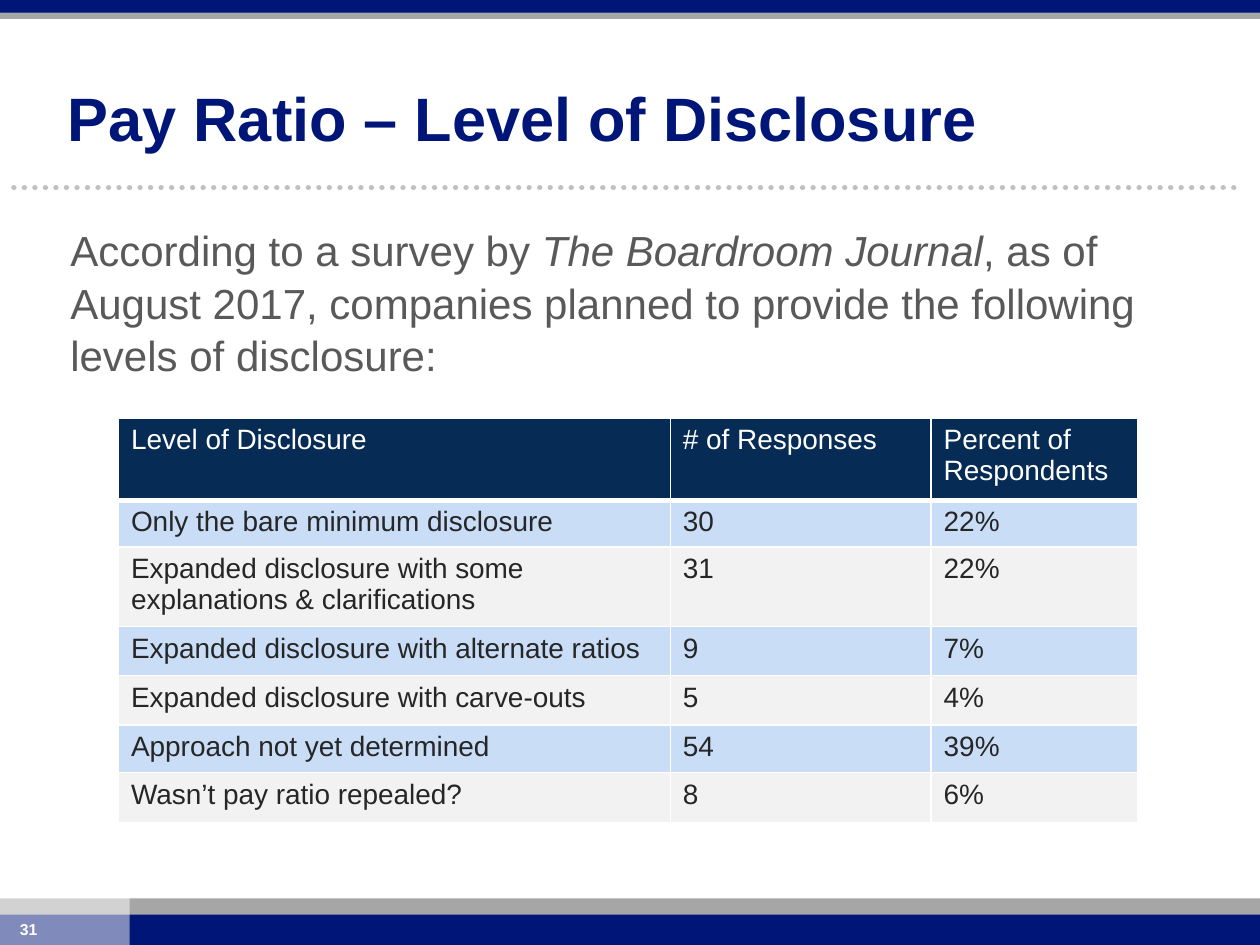
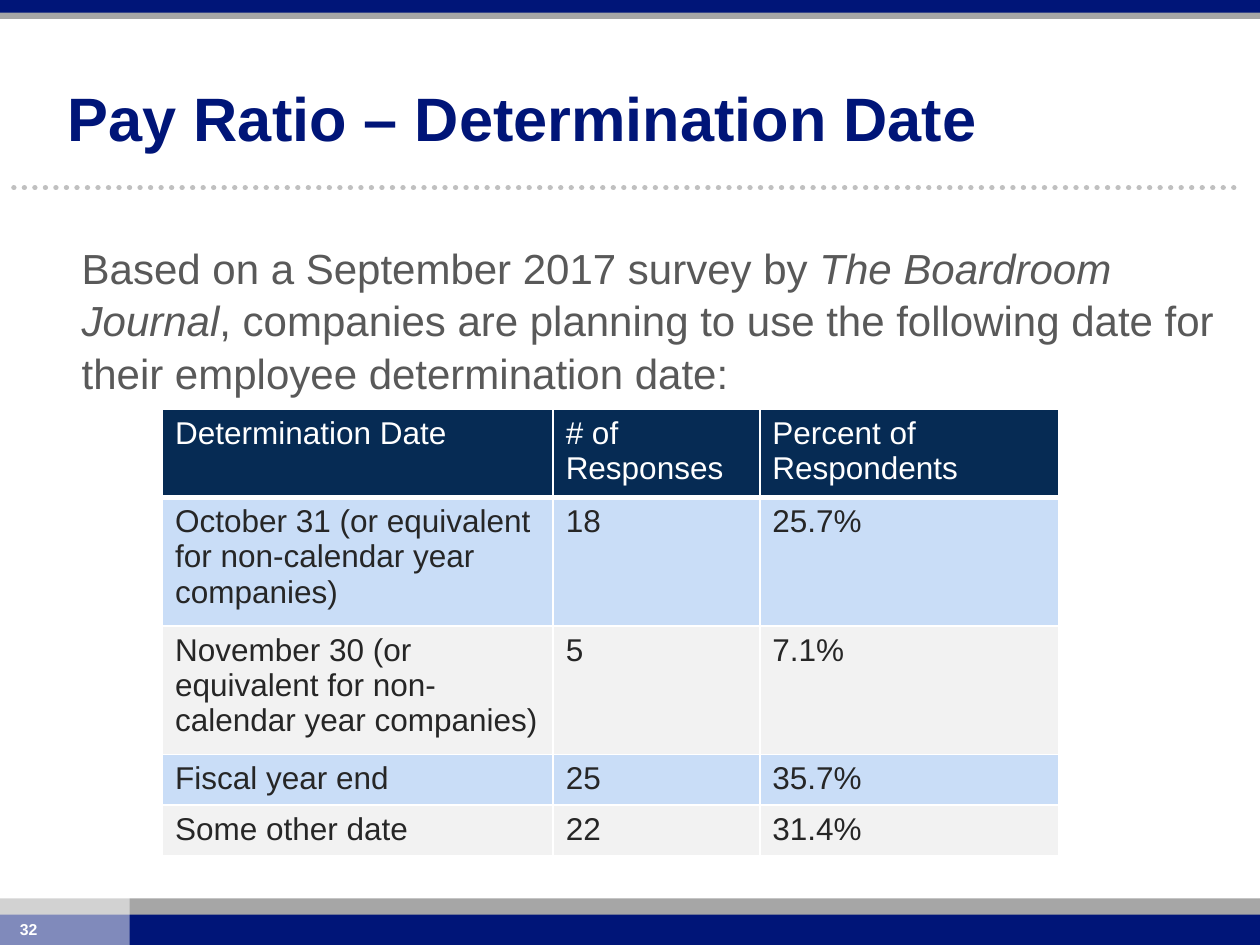
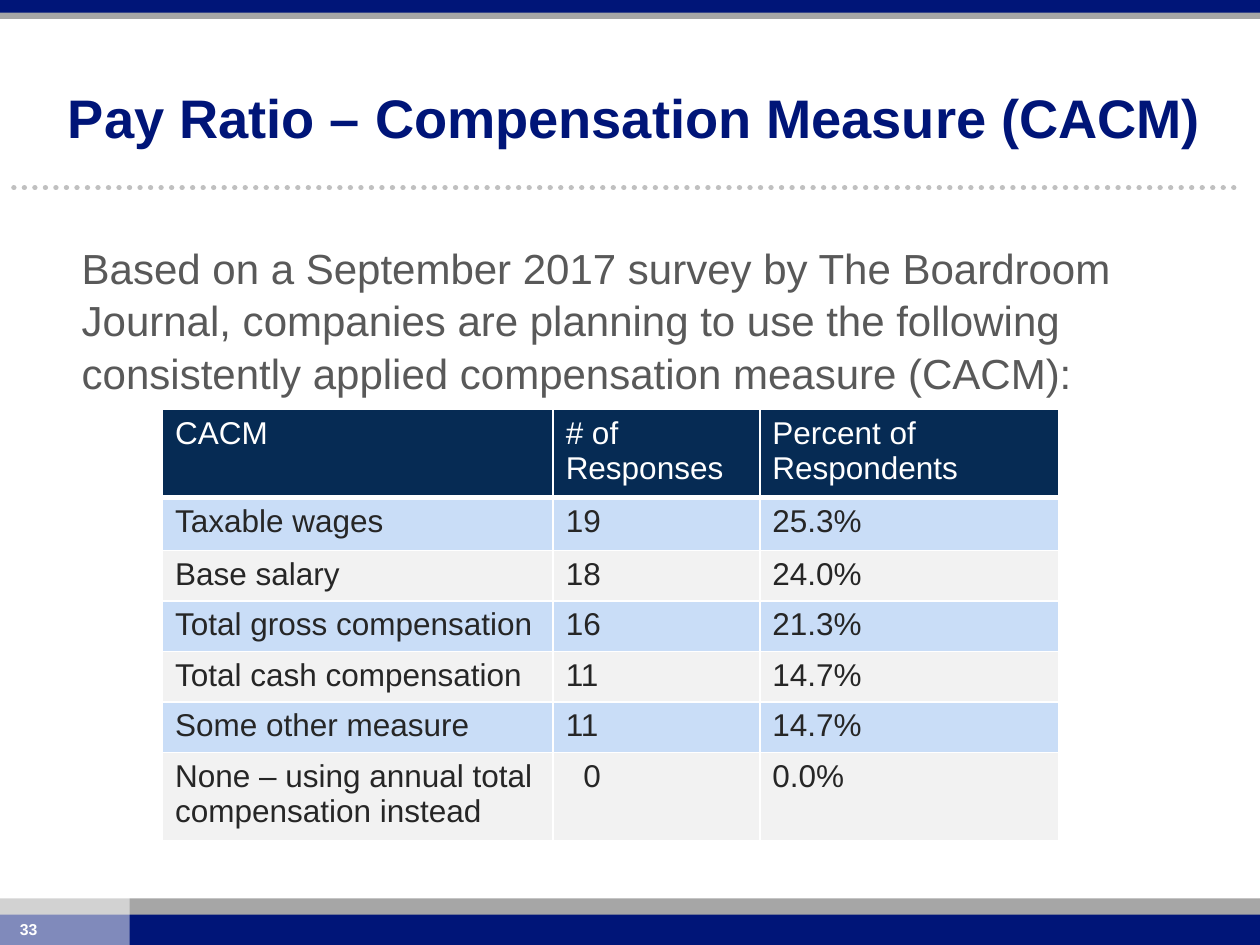
from dataclasses import dataclass

from lxml import etree
from pptx import Presentation
from pptx.dml.color import RGBColor
from pptx.enum.dml import MSO_LINE
from pptx.enum.shapes import MSO_CONNECTOR, MSO_SHAPE
from pptx.enum.text import MSO_ANCHOR
from pptx.oxml.ns import qn
from pptx.util import Inches, Pt

RECTANGLE = MSO_SHAPE.RECTANGLE
STRAIGHT = MSO_CONNECTOR.STRAIGHT
DOTTED = MSO_LINE.ROUND_DOT
TOP, MIDDLE = MSO_ANCHOR.TOP, MSO_ANCHOR.MIDDLE

FONT = "Arial"
COLORS = {
    "navy": "001578",
    "gray": "A6A6A6",
    "white": "FFFFFF",
    "dots": "C0C0C0",
    "body": "595959",
    "header": "062B54",
    "cell": "262626",
    "blue_row": "C9DDF7",
    "gray_row": "F2F2F2",
}


@dataclass(frozen=True)
class Band:
    top: float
    width: float
    height: float
    color: str
    opacity: int = 100


@dataclass(frozen=True)
class Span:
    text: str
    italic: bool = False


@dataclass(frozen=True)
class Style:
    size: float
    color: str
    bold: bool = False


@dataclass(frozen=True)
class Grid:
    left: float
    top: float
    size: float
    columns: tuple[float, ...]
    heights: tuple[float, ...]
    rows: tuple[tuple[str, str, str], ...]
    indented: tuple[tuple[int, int], ...] = ()


@dataclass(frozen=True)
class Page:
    number: int
    title: str
    title_size: float
    intro_at: tuple[float, float]
    intro: tuple[Span, ...]
    grid: Grid


BANDS = (
    Band(7.13, 10, 0.24, "gray"),
    Band(7.26, 10, 0.24, "navy"),
    Band(7.12, 1.03, 0.38, "white", 50),
    Band(0.05, 10, 0.1, "gray"),
    Band(0, 10, 0.1, "navy"),
)
SURVEY_INTRO_AT = (0.55, 1.86)
SURVEY_LEFT, SURVEY_TOP = 1.29, 3.25
SURVEY_COLUMNS = (3.1, 1.64, 2.37)
COUNT, PERCENT = "# of Responses", "Percent of Respondents"

PAGES = (
    Page(
        31, "Pay Ratio – Level of Disclosure", 35, (0.46, 1.72),
        (
            Span("According to a survey by "),
            Span("The Boardroom Journal", True),
            Span(", as of August 2017, companies planned to provide "
                 "the following levels of disclosure:"),
        ),
        Grid(
            0.94, 3.32, 16, (4.38, 2.07, 1.64),
            (0.65, 0.37, 0.62, 0.39, 0.39, 0.38, 0.4),
            (
                ("Level of Disclosure", COUNT, PERCENT),
                ("Only the bare minimum disclosure", "30", "22%"),
                ("Expanded disclosure with some explanations & clarifications", "31", "22%"),
                ("Expanded disclosure with alternate ratios", "9", "7%"),
                ("Expanded disclosure with carve-outs", "5", "4%"),
                ("Approach not yet determined", "54", "39%"),
                ("Wasn’t pay ratio repealed?", "8", "6%"),
            ),
        ),
    ),
    Page(
        32, "Pay Ratio – Determination Date", 35, SURVEY_INTRO_AT,
        (
            Span("Based on a September 2017 survey by "),
            Span("The Boardroom Journal", True),
            Span(", companies are planning to use the following date "
                 "for their employee determination date:"),
        ),
        Grid(
            SURVEY_LEFT, SURVEY_TOP, 18, SURVEY_COLUMNS,
            (0.68, 1.02, 1.02, 0.39, 0.39),
            (
                ("Determination Date", COUNT, PERCENT),
                ("October 31 (or equivalent for non-calendar year companies)", "18", "25.7%"),
                ("November 30 (or equivalent for non-calendar year companies)", "5", "7.1%"),
                ("Fiscal year end", "25", "35.7%"),
                ("Some other date", "22", "31.4%"),
            ),
        ),
    ),
    Page(
        33, "Pay Ratio – Compensation Measure (CACM)", 31, SURVEY_INTRO_AT,
        (
            Span("Based on a September 2017 survey by The Boardroom Journal, "
                 "companies are planning to use the following consistently "
                 "applied compensation measure (CACM):"),
        ),
        Grid(
            SURVEY_LEFT, SURVEY_TOP, 18, SURVEY_COLUMNS,
            (0.68, 0.42, 0.37, 0.39, 0.39, 0.39, 0.65),
            (
                ("CACM", COUNT, PERCENT),
                ("Taxable wages", "19", "25.3%"),
                ("Base salary", "18", "24.0%"),
                ("Total gross compensation", "16", "21.3%"),
                ("Total cash compensation", "11", "14.7%"),
                ("Some other measure", "11", "14.7%"),
                ("None – using annual total compensation instead", "0", "0.0%"),
            ),
            indented=((6, 1),),
        ),
    ),
)


def rgb(name: str) -> RGBColor:
    return RGBColor.from_string(COLORS[name])


def add_span(para, span: Span, style: Style) -> None:
    run = para.add_run()
    run.text = span.text
    font = run.font
    font.name, font.size = FONT, Pt(style.size)
    font.bold, font.italic = style.bold, span.italic
    font.color.rgb = rgb(style.color)


def add_text(slide, left: float, top: float, width: float, height: float,
             spans: tuple[Span, ...], style: Style, anchor=TOP):
    box = slide.shapes.add_textbox(Inches(left), Inches(top), Inches(width), Inches(height))
    frame = box.text_frame
    frame.word_wrap = True
    frame.vertical_anchor = anchor
    para = frame.paragraphs[0]
    for span in spans:
        add_span(para, span, style)
    return para


def add_band(slide, band: Band) -> None:
    shape = slide.shapes.add_shape(
        RECTANGLE, Inches(0), Inches(band.top), Inches(band.width), Inches(band.height))
    shape.shadow.inherit = False
    shape.line.fill.background()
    shape.fill.solid()
    shape.fill.fore_color.rgb = rgb(band.color)
    if band.opacity < 100:
        color = shape.fill._xPr.find(".//" + qn("a:srgbClr"))
        etree.SubElement(color, qn("a:alpha"), val=str(band.opacity * 1000))


def add_dotted_rule(slide) -> None:
    rule = slide.shapes.add_connector(
        STRAIGHT, Inches(0.11), Inches(1.49), Inches(9.81), Inches(1.49))
    rule.line.color.rgb = rgb("dots")
    rule.line.width = Pt(3)
    rule.line.dash_style = DOTTED
    properties = rule._element.spPr
    properties.find(qn("a:ln")).set("cap", "rnd")
    etree.SubElement(properties, qn("a:effectLst"))


def add_frame(slide, number: int) -> None:
    """Draw the rule, bands and page number shared by all slides."""
    add_dotted_rule(slide)
    for band in BANDS:
        add_band(slide, band)
    add_text(slide, 0.06, 7.25, 0.91, 0.25, (Span(str(number)),), Style(9, "white", True))


def set_borders(cell, bottom: float) -> None:
    properties = cell._tc.get_or_add_tcPr()
    for side, width in (("L", 1), ("R", 1), ("T", 1), ("B", bottom)):
        line = etree.SubElement(properties, qn(f"a:ln{side}"), w=str(Pt(width)))
        fill = etree.SubElement(line, qn("a:solidFill"))
        etree.SubElement(fill, qn("a:srgbClr"), val=COLORS["white"])


def add_grid(slide, grid: Grid) -> None:
    table = slide.shapes.add_table(
        len(grid.rows), len(grid.columns), Inches(grid.left), Inches(grid.top),
        Inches(sum(grid.columns)), Inches(sum(grid.heights))).table
    for column, width in zip(table.columns, grid.columns):
        column.width = Inches(width)
    for row, height in zip(table.rows, grid.heights):
        row.height = Inches(height)
    for r, values in enumerate(grid.rows):
        header = r == 0
        fill = "header" if header else "blue_row" if r % 2 else "gray_row"
        style = Style(grid.size, "white" if header else "cell")
        for c, value in enumerate(values):
            cell = table.cell(r, c)
            set_borders(cell, bottom=3 if header else 1)
            cell.fill.solid()
            cell.fill.fore_color.rgb = rgb(fill)
            if (r, c) in grid.indented:
                cell.margin_left = Inches(0.24)
            add_span(cell.text_frame.paragraphs[0], Span(value), style)


def add_page(deck, page: Page) -> None:
    slide = deck.slides.add_slide(deck.slide_layouts[6])
    add_frame(slide, page.number)
    add_text(slide, 0.44, 0.56, 9.25, 0.74, (Span(page.title),),
             Style(page.title_size, "navy", True), MIDDLE)
    intro = add_text(slide, *page.intro_at, 9.21, 5.05, page.intro, Style(24, "body"))
    intro.line_spacing = 1.04
    intro.space_after = Pt(12)
    add_grid(slide, page.grid)


def main() -> None:
    deck = Presentation()
    deck.slide_width, deck.slide_height = Inches(10), Inches(7.5)
    for page in PAGES:
        add_page(deck, page)
    deck.save("out.pptx")


if __name__ == "__main__":
    main()
